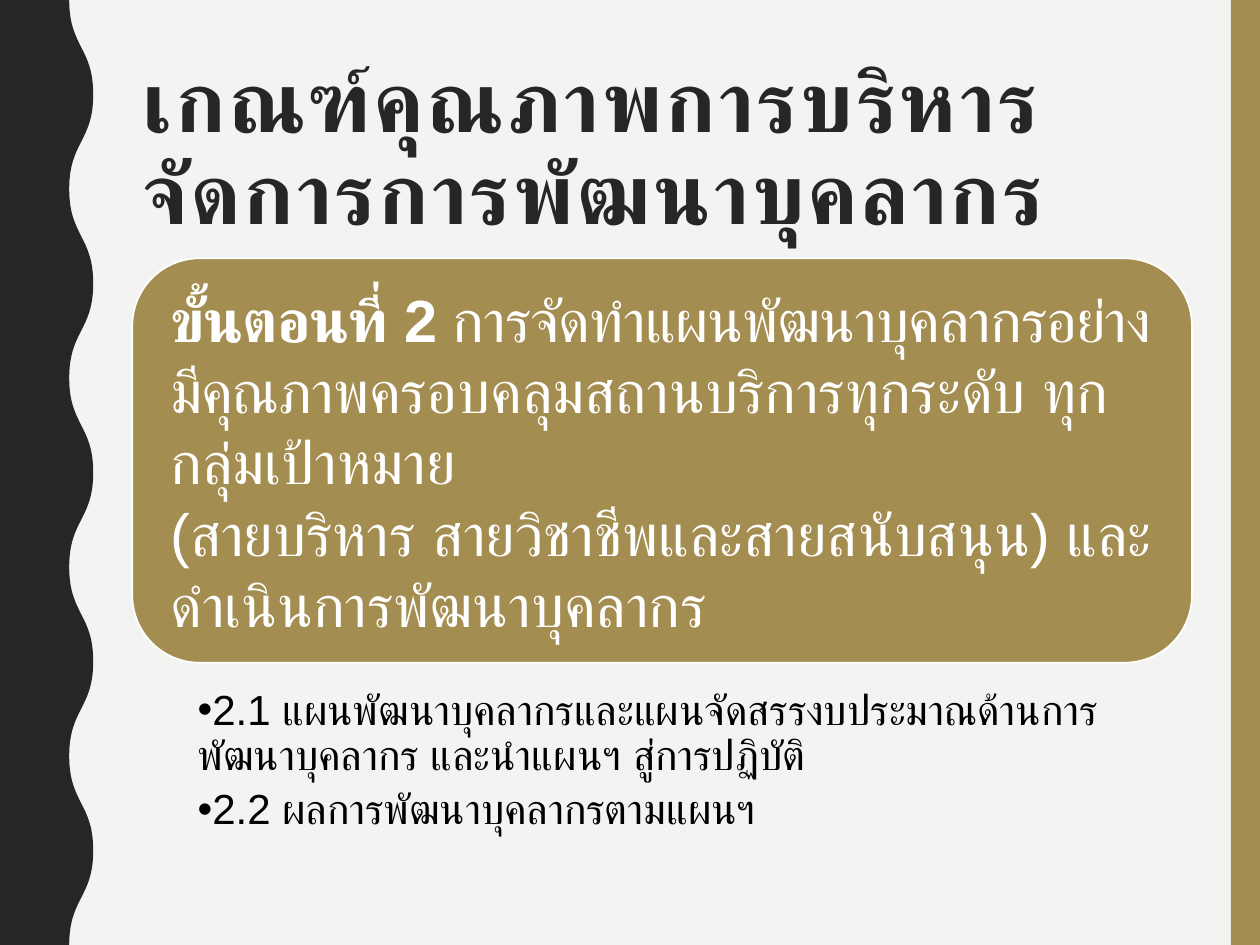
from lxml import etree
from pptx import Presentation
from pptx import util as u
from pptx.dml.color import RGBColor
from pptx.enum import shapes, text
from pptx.oxml import ns

COLORS = {"paper": "F3F3F2", "gold": "A38D51", "dark": "262626",
          "white": "FFFFFF", "black": "000000"}
FONT = "Arial"
TITLE = "เกณฑ์คุณภาพการบริหารจัดการการพัฒนาบุคลากร"
STEP = [
    ("ขั้นตอนที่ 2 ", True, -0.5),
    ("การจัดทำแผนพัฒนาบุคลากรอย่างมีคุณภาพ", False, -0.5),
    ("ครอบคลุมสถานบริการทุกระดับ ทุกกลุ่มเป้าหมาย", False, 0),
    "break",
    ("(สายบริหาร สายวิชาชีพและสายสนับสนุน) และดำเนินการพัฒนาบุคลากร", False, 0),
]
ITEMS = [
    "2.1 แผนพัฒนาบุคลากรและแผนจัดสรรงบประมาณด้านการพัฒนาบุคลากร และนำแผนฯ สู่การปฏิบัติ",
    "2.2 ผลการพัฒนาบุคลากรตามแผนฯ",
]


def rgb(name):
    return RGBColor.from_string(COLORS[name])


def set_all(target, values):
    for name, value in values.items():
        setattr(target, name, value)


def place(shape, left, top, width, height):
    set_all(shape, {"left": u.Pt(left), "top": u.Pt(top),
                    "width": u.Pt(width), "height": u.Pt(height)})


def paint(shape, fill, line=None):
    shape.shadow.inherit = False
    shape.fill.solid()
    shape.fill.fore_color.rgb = rgb(fill)
    if line:
        shape.line.color.rgb = rgb(line)
        shape.line.width = u.Pt(1)
    else:
        shape.line.fill.background()


def set_frame(box, anchor, sides, ends):
    """Fix wrapping, anchor and (left, right), (top, bottom) insets."""
    set_all(box.text_frame, {
        "word_wrap": True, "auto_size": text.MSO_AUTO_SIZE.NONE,
        "vertical_anchor": anchor,
        "margin_left": u.Pt(sides[0]), "margin_right": u.Pt(sides[1]),
        "margin_top": u.Pt(ends[0]), "margin_bottom": u.Pt(ends[1])})


def add_span(para, words, size, color, bold=False, spacing=0):
    span = para.add_run()
    span.text = words
    set_all(span.font, {"name": FONT, "size": u.Pt(size), "bold": bold})
    span.font.color.rgb = rgb(color)
    props = span.font._element
    props.set("spc", str(int(spacing * 100)))
    etree.SubElement(props, ns.qn("a:cs")).set("typeface", FONT)


def add_wave(page):
    """Draw the left band; its right edge swings between two x values."""
    swing, half, turns = (u.Pt(39.6), u.Pt(53.3)), u.Pt(54), 10
    edge = [(swing[turn % 2], half * turn) for turn in range(turns + 1)]
    builder = page.shapes.build_freeform(*edge[0], scale=1.0)
    builder.add_line_segments(edge[1:] + [(0, half * turns), (0, 0)], close=True)
    band = builder.convert_to_shape()
    lines = list(band._element.iter(ns.qn("a:lnTo")))
    for line, start, end in zip(lines, edge, edge[1:]):
        middle = (start[1] + end[1]) // 2
        curve = etree.Element(ns.qn("a:cubicBezTo"))
        for x, y in ((start[0], middle), (end[0], middle), end):
            point = etree.SubElement(curve, ns.qn("a:pt"))
            point.set("x", str(int(x)))
            point.set("y", str(int(y)))
        line.getparent().replace(line, curve)
    paint(band, "dark")


def add_panel(page, kind, bounds, fill, line=None):
    panel = page.shapes.add_shape(kind, *map(u.Pt, bounds))
    paint(panel, fill, line)


def fill_title(box):
    place(box, 74.2, 30.2, 607.7, 117.4)
    set_frame(box, text.MSO_ANCHOR.MIDDLE, (7.2, 7.2), (0, 5.7))
    para = box.text_frame.paragraphs[0]
    set_all(para, {"alignment": text.PP_ALIGN.LEFT, "line_spacing": 0.9})
    add_span(para, TITLE, 48.6, "dark", True, 1.5)


def add_step(page):
    box = page.shapes.add_textbox(*map(u.Pt, (87.1, 159.1, 583.2, 208.8)))
    set_frame(box, text.MSO_ANCHOR.MIDDLE, (10.3, 10.3), (10.3, 10.3))
    para = box.text_frame.paragraphs[0]
    for part in STEP:
        if part == "break":
            para.add_line_break()
        else:
            words, bold, spacing = part
            add_span(para, words, 34, "white", bold, spacing)


def fill_list(box):
    place(box, 75.6, 391.7, 605.5, 99.4)
    set_frame(box, text.MSO_ANCHOR.TOP, (19.4, 13.7), (2.2, 2.2))
    frame = box.text_frame
    for index, words in enumerate(ITEMS):
        para = frame.add_paragraph() if index else frame.paragraphs[0]
        set_all(para, {"level": 1, "alignment": text.PP_ALIGN.LEFT,
                       "line_spacing": 0.9, "space_before": u.Pt(0),
                       "space_after": u.Pt(4.8)})
        props = para._p.get_or_add_pPr()
        props.set("marL", str(u.Pt(18)))
        props.set("indent", "0")
        etree.SubElement(props, ns.qn("a:buFont")).set("typeface", FONT)
        etree.SubElement(props, ns.qn("a:buChar")).set("char", "•")
        add_span(para, words, 24, "black")


def main():
    deck = Presentation()
    deck.slide_width, deck.slide_height = u.Pt(720), u.Pt(540)
    page = deck.slides.add_slide(deck.slide_layouts[1])
    page.background.fill.solid()
    page.background.fill.fore_color.rgb = rgb("paper")
    kinds = shapes.MSO_SHAPE
    add_panel(page, kinds.RECTANGLE, (703.4, 0, 16.6, 540), "gold")
    add_wave(page)
    fill_title(page.shapes.title)
    add_panel(page, kinds.ROUNDED_RECTANGLE, (75.6, 147.6, 605.5, 231.1),
              "gold", "white")
    add_step(page)
    fill_list(page.placeholders[1])
    deck.save("out.pptx")


if __name__ == "__main__":
    main()
